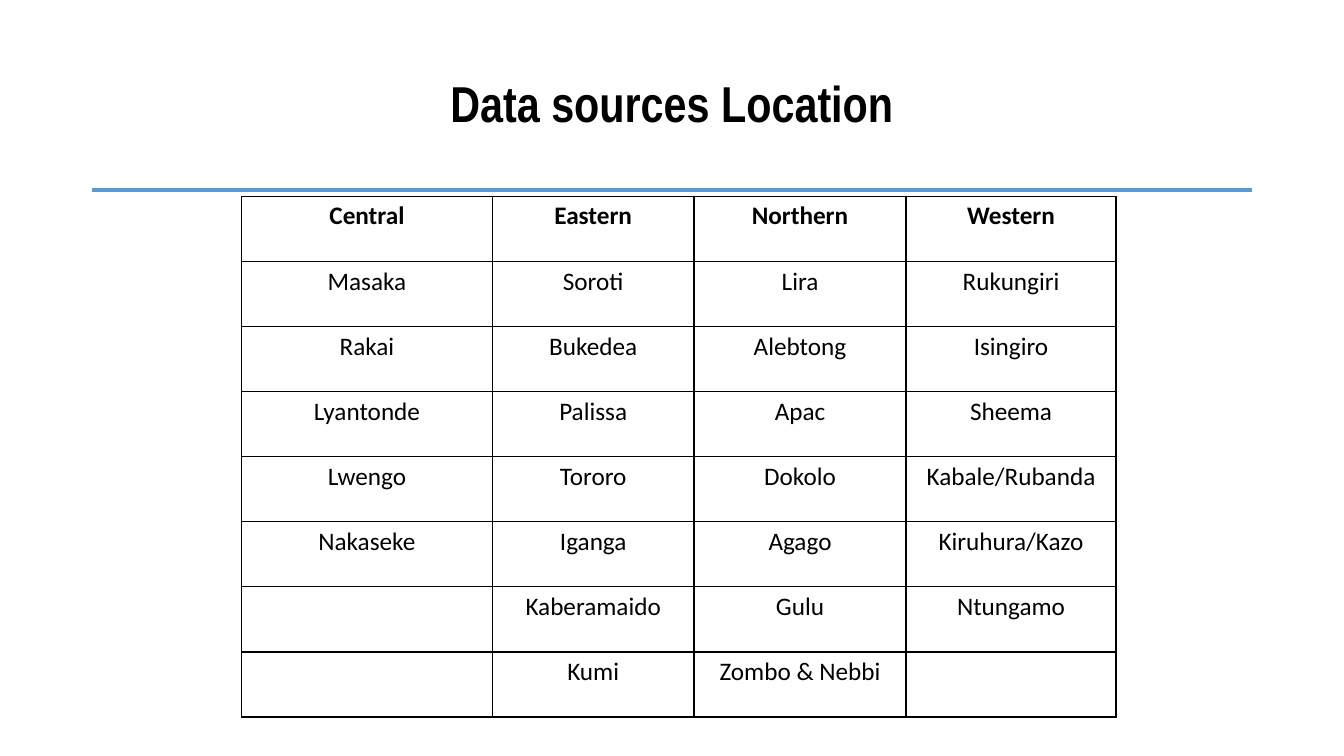
from dataclasses import dataclass

from lxml import etree
from pptx import Presentation
from pptx import util as u
from pptx.dml.color import RGBColor
from pptx.enum import shapes, text
from pptx.oxml.ns import qn

PX = 9525
BLACK, BLUE = "000000", "5B9BD5"
LEFT, RIGHT = 88, 1192
TABLE_LEFT, TABLE_TOP, ROW_HEIGHT = 230, 187, 62


@dataclass
class Region:
    name: str
    width: int
    districts: list[str]


REGIONS = [
    Region("Central", 239, ["Masaka", "Rakai", "Lyantonde", "Lwengo", "Nakaseke"]),
    Region("Eastern", 192, ["Soroti", "Bukedea", "Palissa", "Tororo", "Iganga",
                            "Kaberamaido", "Kumi"]),
    Region("Northern", 202, ["Lira", "Alebtong", "Apac", "Dokolo", "Agago",
                             "Gulu", "Zombo & Nebbi"]),
    Region("Western", 200, ["Rukungiri", "Isingiro", "Sheema", "Kabale/Rubanda",
                            "Kiruhura/Kazo", "Ntungamo"]),
]


def px(n: int) -> u.Emu:
    return u.Emu(n * PX)


def rgb(color: str) -> RGBColor:
    return RGBColor.from_string(color)


def style_paragraph(p, font: str, size: int, bold: bool, spacing: float) -> None:
    p.alignment = text.PP_ALIGN.CENTER
    p.line_spacing = spacing
    p.font.name, p.font.size, p.font.bold = font, u.Pt(size), bold
    p.font.color.rgb = rgb(BLACK)


def add_rule(s) -> None:
    line = s.shapes.add_connector(shapes.MSO_CONNECTOR.STRAIGHT,
                                  px(LEFT), px(181), px(RIGHT), px(181))
    line.line.color.rgb = rgb(BLUE)
    line.line.width = u.Pt(2.25)
    etree.SubElement(line._element.spPr, qn("a:effectLst"))


def add_title(s, title: str) -> None:
    tf = s.shapes.add_textbox(px(LEFT), px(38), px(RIGHT - LEFT), px(139)).text_frame
    tf.word_wrap = True
    tf.vertical_anchor = text.MSO_ANCHOR.MIDDLE
    tf.margin_bottom = px(18)
    p = tf.paragraphs[0]
    p.text = title
    style_paragraph(p, "Arial Narrow", 36, True, 0.9)


def add_borders(cell) -> None:
    tc_pr = cell._tc.get_or_add_tcPr()
    for side in ("lnL", "lnR", "lnT", "lnB"):
        ln = etree.SubElement(tc_pr, qn(f"a:{side}"), w=str(u.Pt(1)))
        fill = etree.SubElement(ln, qn("a:solidFill"))
        etree.SubElement(fill, qn("a:srgbClr"), val=BLACK)


def fill_cell(cell, label: str, bold: bool) -> None:
    add_borders(cell)
    cell.fill.background()
    cell.margin_left = cell.margin_right = px(6)
    cell.margin_top = cell.margin_bottom = 0
    p = cell.text_frame.paragraphs[0]
    p.text = label
    p.space_after = u.Pt(10)
    style_paragraph(p, "Calibri", 18, bold, 1.15)


def add_region_table(s, regions: list[Region]) -> None:
    rows = 1 + max(len(region.districts) for region in regions)
    width = sum(region.width for region in regions)
    table = s.shapes.add_table(rows, len(regions), px(TABLE_LEFT), px(TABLE_TOP),
                               px(width), px(rows * ROW_HEIGHT)).table
    table.first_row = table.horz_banding = False
    for col, region in enumerate(regions):
        table.columns[col].width = px(region.width)
        labels = [region.name, *region.districts]
        for row in range(rows):
            label = labels[row] if row < len(labels) else ""
            fill_cell(table.cell(row, col), label, row == 0)


def main() -> None:
    prs = Presentation()
    prs.slide_width, prs.slide_height = px(1280), px(720)
    s = prs.slides.add_slide(prs.slide_layouts[6])
    add_rule(s)
    add_title(s, "Data sources Location")
    add_region_table(s, REGIONS)
    prs.save("out.pptx")


if __name__ == "__main__":
    main()
